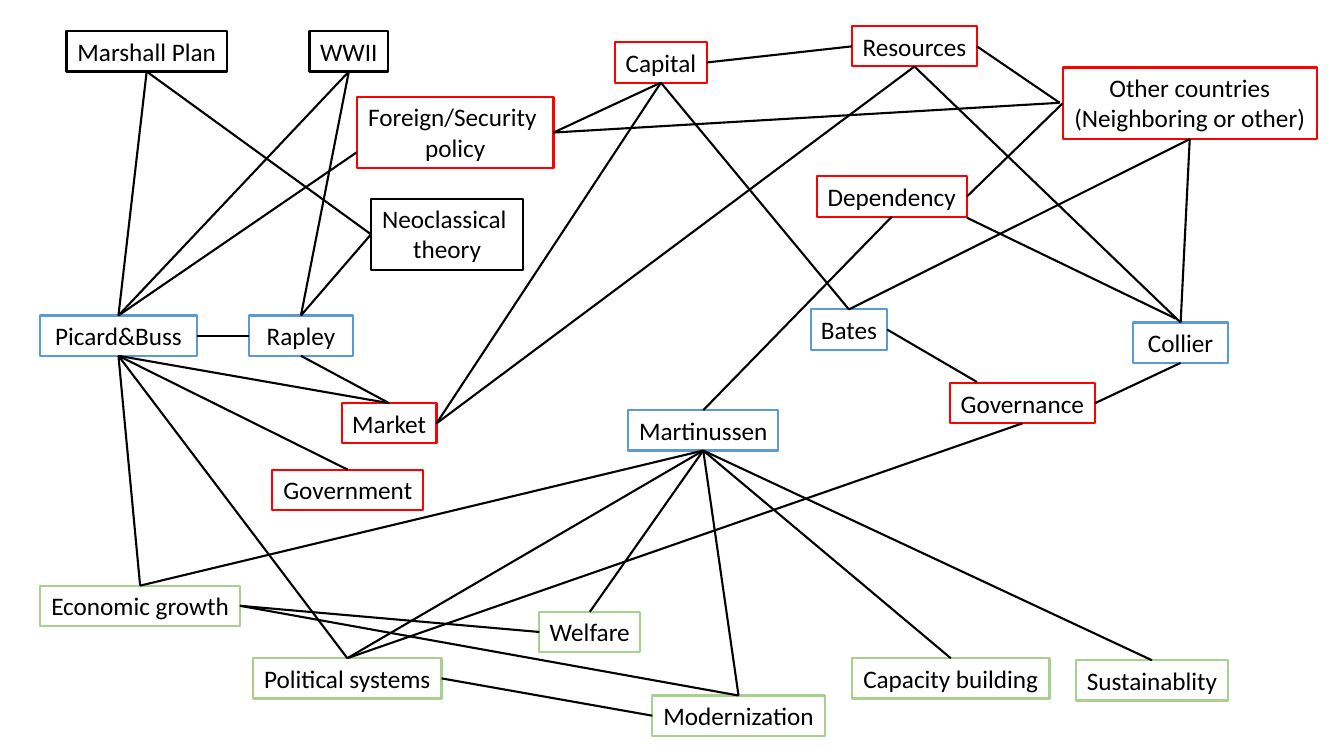
from lxml import etree
from pptx import Presentation
from pptx import util as u
from pptx.dml.color import RGBColor
from pptx.enum import shapes, text
from pptx.oxml import ns

BLACK = RGBColor(0x00, 0x00, 0x00)
RED = RGBColor(0xFF, 0x00, 0x00)
BLUE = RGBColor(0x5B, 0x9B, 0xD5)
GREEN = RGBColor(0xA9, 0xD1, 0x8E)
TOP, LEFT, BOTTOM, RIGHT = range(4)
LINE_HEIGHTS = {1: 0.4, 2: 0.71}
WRAPPED = {"Collier", "Rapley", "Picard&Buss"}

concepts = [
    ("Marshall Plan", 0.66, 0.31, 1.59, BLACK),
    ("WWII", 3.07, 0.31, 0.78, BLACK),
    ("Neoclassical \ntheory", 3.68, 1.97, 1.51, BLACK),
    ("Foreign/Security \npolicy", 3.54, 0.96, 1.95, RED),
    ("Capital", 6.1, 0.42, 0.91, RED),
    ("Resources", 8.45, 0.26, 1.24, RED),
    ("Other countries\n(Neighboring or other)", 10.54, 0.67, 2.52, RED),
    ("Dependency", 8.1, 1.75, 1.49, RED),
    ("Governance", 9.42, 3.8, 1.44, RED),
    ("Market", 3.39, 4, 0.94, RED),
    ("Government", 2.7, 4.66, 1.5, RED),
    ("Picard&Buss", 0.4, 3.13, 1.55, BLUE),
    ("Rapley", 2.47, 3.13, 1.03, BLUE),
    ("Bates", 8.04, 3.07, 0.76, BLUE),
    ("Collier", 11.24, 3.2, 0.94, BLUE),
    ("Martinussen", 6.23, 4.07, 1.49, BLUE),
    ("Economic growth", 0.4, 5.81, 1.98, GREEN),
    ("Political systems", 2.51, 6.53, 1.87, GREEN),
    ("Welfare", 5.35, 6.07, 1, GREEN),
    ("Modernization", 6.47, 6.9, 1.71, GREEN),
    ("Capacity building", 8.45, 6.53, 1.96, GREEN),
    ("Sustainablity", 10.67, 6.55, 1.51, GREEN),
]

links = [
    (("WWII", BOTTOM), ("Rapley", TOP)),
    (("WWII", BOTTOM), ("Picard&Buss", TOP)),
    (("Marshall Plan", BOTTOM), ("Picard&Buss", TOP)),
    (("Marshall Plan", BOTTOM), ("Neoclassical", LEFT)),
    (("Neoclassical", LEFT), ("Rapley", TOP)),
    ((3.54, 1.51), ("Picard&Buss", TOP)),
    (("Picard&Buss", RIGHT), ("Rapley", LEFT)),
    (("Picard&Buss", BOTTOM), ("Economic growth", TOP)),
    (("Picard&Buss", BOTTOM), ("Political systems", TOP)),
    (("Picard&Buss", BOTTOM), ("Market", TOP)),
    (("Picard&Buss", BOTTOM), ("Government", TOP)),
    (("Rapley", BOTTOM), ("Market", TOP)),
    (("Foreign/Security", RIGHT), ("Capital", BOTTOM)),
    (("Capital", BOTTOM), ("Bates", TOP)),
    (("Capital", RIGHT), ("Resources", LEFT)),
    (("Capital", BOTTOM), ("Market", RIGHT)),
    (("Resources", BOTTOM), ("Collier", TOP)),
    (("Resources", BOTTOM), ("Market", RIGHT)),
    (("Resources", RIGHT), (10.51, 1.02)),
    ((10.51, 1.02), ("Foreign/Security", RIGHT)),
    (("Dependency", RIGHT), ("Other countries", LEFT)),
    ((9.59, 2.16), (11.66, 3.16)),
    (("Martinussen", TOP), ("Dependency", BOTTOM)),
    (("Other countries", BOTTOM), ("Collier", TOP)),
    (("Bates", TOP), ("Other countries", BOTTOM)),
    (("Bates", RIGHT), (9.69, 3.79)),
    (("Collier", BOTTOM), ("Governance", RIGHT)),
    (("Governance", BOTTOM), ("Political systems", TOP)),
    (("Martinussen", BOTTOM), ("Modernization", TOP)),
    (("Martinussen", BOTTOM), ("Welfare", TOP)),
    (("Martinussen", BOTTOM), ("Capacity building", TOP)),
    (("Martinussen", BOTTOM), ("Sustainablity", TOP)),
    (("Martinussen", BOTTOM), ("Political systems", TOP)),
    (("Martinussen", BOTTOM), ("Economic growth", TOP)),
    (("Economic growth", RIGHT), ("Modernization", TOP)),
    (("Economic growth", RIGHT), ("Welfare", LEFT)),
    (("Political systems", RIGHT), ("Modernization", LEFT)),
]

deck = Presentation()
deck.slide_width, deck.slide_height = u.Inches(13.33), u.Inches(7.5)
concept_map = deck.slides.add_slide(deck.slide_layouts[6])

boxes = {}
for wording, left, top, width, color in concepts:
    lines = wording.split("\n")
    height = LINE_HEIGHTS[len(lines)]
    box = concept_map.shapes.add_textbox(*map(u.Inches, (left, top, width, height)))
    box.line.color.rgb = color
    box.line.width = u.Pt(1.5)
    frame = box.text_frame
    frame.text = wording
    frame.word_wrap = wording in WRAPPED
    frame.auto_size = text.MSO_AUTO_SIZE.SHAPE_TO_FIT_TEXT
    for paragraph in frame.paragraphs:
        paragraph.alignment = text.PP_ALIGN.CENTER
        for run in paragraph.runs:
            for attribute, value in {"name": "Calibri", "size": u.Pt(18)}.items():
                setattr(run.font, attribute, value)
            run.font.color.rgb = BLACK
    boxes[lines[0].strip()] = box

for start, end in links:
    free_ends = [(0, 0) if place[0] in boxes else place for place in (start, end)]
    link = concept_map.shapes.add_connector(
        shapes.MSO_CONNECTOR.STRAIGHT, *[u.Inches(n) for point in free_ends for n in point]
    )
    for place, connect in ((start, link.begin_connect), (end, link.end_connect)):
        if place[0] in boxes:
            connect(boxes[place[0]], place[1])
    link.line.color.rgb = BLACK
    link.line.width = u.Pt(1.5)
    etree.SubElement(link._element.spPr, ns.qn("a:effectLst"))

deck.save("out.pptx")
